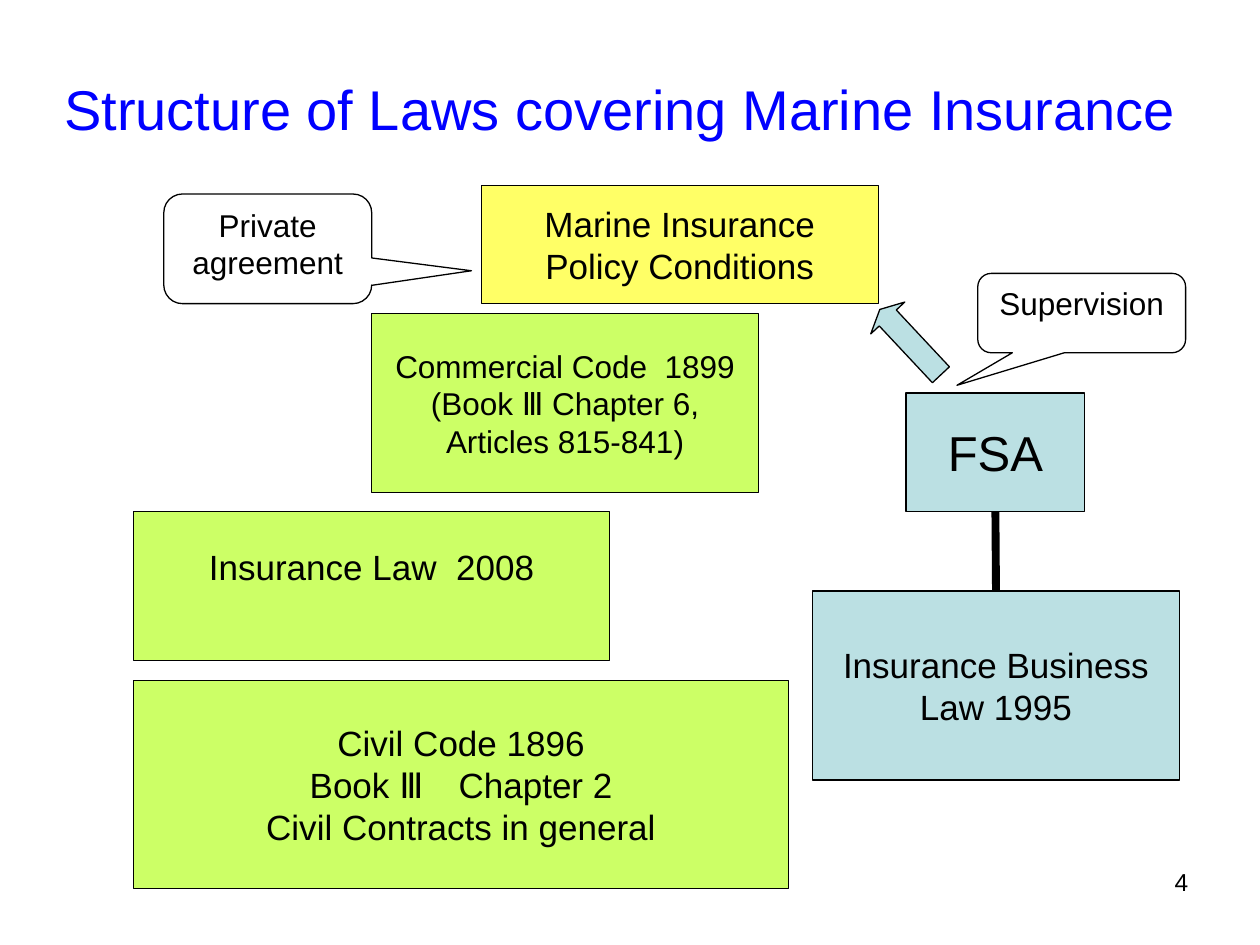
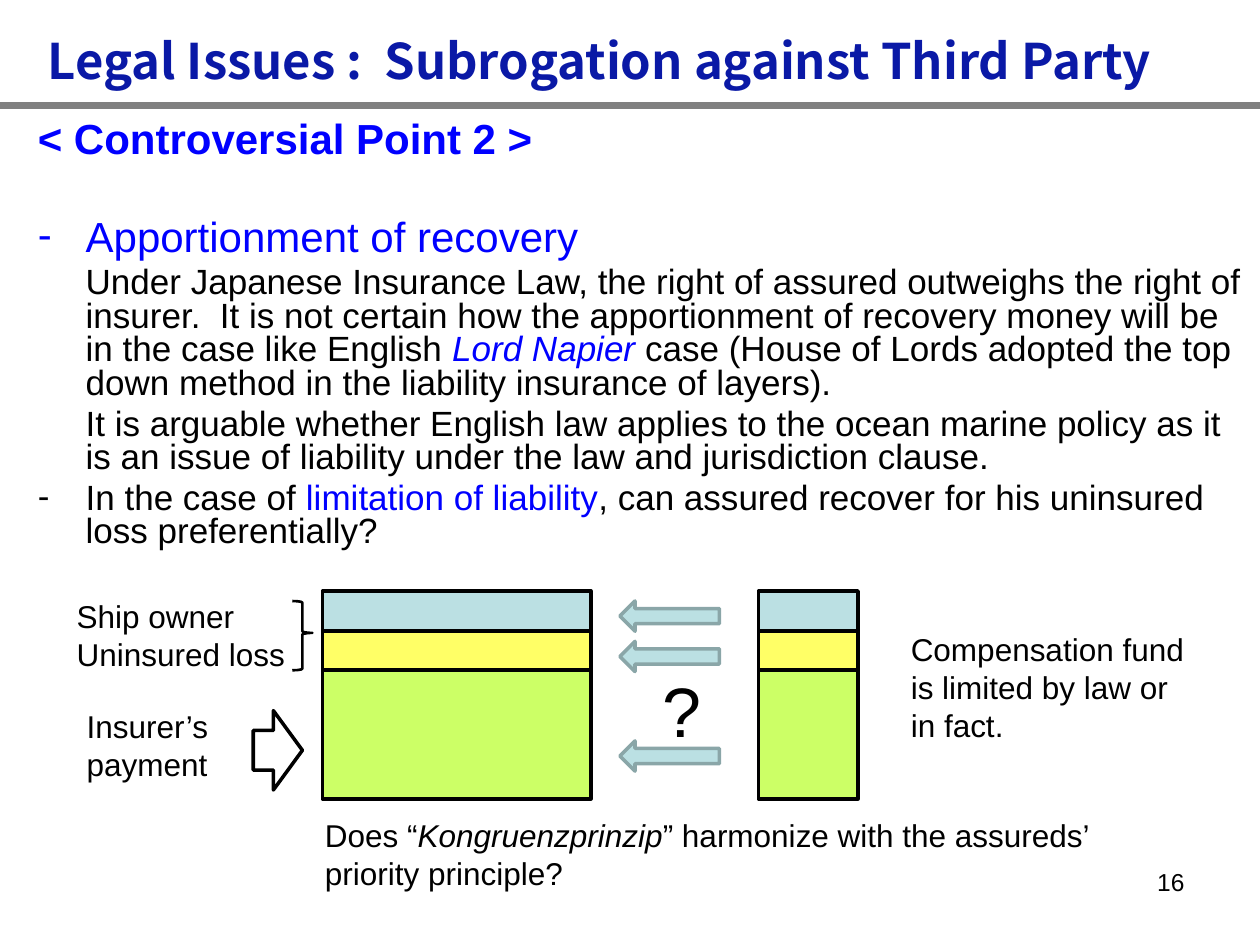
from lxml import etree
from pptx import Presentation, util as u
from pptx.dml.color import RGBColor
from pptx.enum import shapes, text
from pptx.oxml.ns import qn

PX = 9144
BLACK, BLUE, NAVY, GRAY = "000000", "0000FF", "0A19A6", "808080"
GREEN, YELLOW, AQUA, AQUA_EDGE = "CCFF66", "FFFF66", "BBE0E3", "8AA6A8"
LEFT, CENTER, RIGHT = text.PP_ALIGN.LEFT, text.PP_ALIGN.CENTER, text.PP_ALIGN.RIGHT
TOP, MIDDLE = text.MSO_ANCHOR.TOP, text.MSO_ANCHOR.MIDDLE
KIND = shapes.MSO_SHAPE
rgb = RGBColor.from_string


def write(sp, lines, size, color=BLACK, align=LEFT, anchor=TOP, wrap=True, font="Arial", bold=False):
    tf = sp.text_frame
    tf.word_wrap, tf.vertical_anchor = wrap, anchor
    tf.auto_size = text.MSO_AUTO_SIZE.NONE
    for i, line in enumerate(lines):
        p = tf.add_paragraph() if i else tf.paragraphs[0]
        p.alignment = align
        p.font.name, p.font.size, p.font.bold = font, u.Pt(size), bold
        p.font.color.rgb = rgb(color)
        for part in [(line,)] if isinstance(line, str) else line:
            r = p.add_run()
            r.text = part[0]
            if len(part) > 1:
                r.font.color.rgb, r.font.italic = rgb(part[1]), part[2]
    return tf


def draw(s, kind, box, fill=None, line=BLACK, width=0.75, adj=(), rotation=0):
    sp = s.shapes.add_shape(kind, *[v * PX for v in box])
    sp.shadow.inherit = False
    sp.rotation = rotation
    if fill:
        sp.fill.solid()
        sp.fill.fore_color.rgb = rgb(fill)
    else:
        sp.fill.background()
    sp.line.color.rgb, sp.line.width = rgb(line), u.Pt(width)
    for i, value in enumerate(adj):
        sp.adjustments[i] = value
    return sp


prs = Presentation()
prs.slide_width, prs.slide_height = 1000 * PX, 750 * PX
laws = prs.slides.add_slide(prs.slide_layouts[5])
issues = prs.slides.add_slide(prs.slide_layouts[1])

for s, title, box, size, color, font, bold, number, left in [
    (laws, "Structure of Laws covering Marine Insurance", (41, 52, 955, 67), 32, BLUE, "Arial", False, "4", 720),
    (issues, "Legal Issues :  Subrogation against Third Party", (28, 19, 937, 57), 28, NAVY,
     "Noto Sans CJK JP", True, "16", 717),
]:
    sp = s.shapes.title
    sp.left, sp.top, sp.width, sp.height = [v * PX for v in box]
    write(sp, [title], size, color, anchor=MIDDLE, font=font, bold=bold)
    sp = s.shapes.add_textbox(left * PX, 683 * PX, 233 * PX, 52 * PX)
    write(sp, [number], 14, align=RIGHT)

s = laws
boxes = {}
for name, box, fill, size, lines in [
    ("commercial", (295, 249, 307, 142), GREEN, 18,
     ["Commercial Code  1899", "(Book Ⅲ Chapter 6,", "Articles 815-841)"]),
    ("policy", (382, 147, 315, 94), YELLOW, 20, ["Marine Insurance", "Policy Conditions"]),
    ("insurance", (106, 406, 378, 118), GREEN, 20, ["Insurance Law  2008"]),
    ("civil", (106, 540, 520, 165), GREEN, 20,
     ["Civil Code 1896", "Book Ⅲ　Chapter 2", "Civil Contracts in general"]),
    ("fsa", (719, 312, 142, 94), AQUA, 28, ["FSA"]),
    ("business", (645, 469, 291, 150), AQUA, 20, ["Insurance Business", "Law 1995"]),
]:
    boxes[name] = draw(s, KIND.RECTANGLE, box, fill)
    write(boxes[name], lines, size, align=CENTER, anchor=MIDDLE, wrap=False)
boxes["insurance"].text_frame.margin_bottom = 36 * PX

for label, box, adj in [
    ("Private agreement", (130, 154, 165, 87), (0.98, 0.2, 0.17)),
    ("Supervision", (776, 217, 165, 63), (-0.6, 0.91, 0.17)),
]:
    sp = draw(s, KIND.ROUNDED_RECTANGULAR_CALLOUT, box, adj=adj)
    write(sp, [label], 18, align=CENTER)

draw(s, KIND.RIGHT_ARROW, (687, 253, 71, 37), AQUA, adj=(0.5, 0.25), rotation=226.9)
link = s.shapes.add_connector(shapes.MSO_CONNECTOR.STRAIGHT, 790 * PX, 406 * PX, 790 * PX, 469 * PX)
link.begin_connect(boxes["fsa"], 2)
link.end_connect(boxes["business"], 0)

s = issues
rule = s.shapes.add_connector(shapes.MSO_CONNECTOR.STRAIGHT, 0, 84 * PX, 1000 * PX, 84 * PX)
for line, color, width in [(link, BLACK, 4.5), (rule, GRAY, 4)]:
    line.line.color.rgb, line.line.width = rgb(color), u.Pt(width)
    etree.SubElement(line._element.spPr, qn("a:effectLst"))

body = s.placeholders[1]
body.left, body.top, body.width, body.height = [v * PX for v in (20, 92, 980, 583)]
tf = write(body, [
    "< Controversial Point 2 >",
    "Apportionment of recovery",
    [("Under Japanese Insurance Law, the right of assured outweighs the right of insurer.  It is not certain "
      "how the apportionment of recovery money will be in the case like English ",),
     ("Lord Napier ", BLUE, True),
     ("case (House of Lords adopted the top down method in the liability insurance of layers).",)],
    "It is arguable whether English law applies to the ocean marine policy as it is an issue of liability "
    "under the law and jurisdiction clause.",
    [("In the case of ",), ("limitation of liability", BLUE, False),
     (", can assured recover for his uninsured loss preferentially?",)],
], 20)
for p, before, margin, bullet in zip(tf.paragraphs, (5, 33, 4, 4, 4), (0, 38, 38, 38, 38), (0, 1, 0, 0, 1)):
    p.line_spacing, p.space_before = 0.8, u.Pt(before)
    pPr = p._p.get_or_add_pPr()
    pPr.set("marL", str(margin * PX))
    pPr.set("indent", str(-margin * PX if bullet else 0))
    mark = etree.Element(qn("a:buChar"), char="-") if bullet else etree.Element(qn("a:buNone"))
    pPr.find(qn("a:defRPr")).addprevious(mark)
for p in tf.paragraphs[:2]:
    p.font.size, p.font.color.rgb = u.Pt(24), rgb(BLUE)
tf.paragraphs[0].font.bold = True

for left, width in [(256, 213), (602, 79)]:
    top = 469
    for height, fill in [(32, AQUA), (31, YELLOW), (102, GREEN)]:
        draw(s, KIND.RECTANGLE, (left, top, width, height), fill, width=2)
        top += height
for top in (477, 509, 588):
    draw(s, KIND.RIGHT_ARROW, (492, top, 79, 24), AQUA, AQUA_EDGE, 2, rotation=180)
draw(s, KIND.RIGHT_BRACE, (232, 477, 16, 55), width=1.5, adj=(0.08, 0.46))
draw(s, KIND.RIGHT_ARROW, (201, 564, 39, 63), width=2, adj=(0.5, 0.59))

for box, lines, size, wrap in [
    ((59, 556, 117, 71), ["Insurer’s", "payment"], 18, False),
    ((51, 469, 187, 71), ["Ship owner", "Uninsured loss"], 18, False),
    ((516, 525, 47, 77), ["?"], 40, True),
    ((248, 643, 661, 71), [[("Does “",), ("Kongruenzprinzip", BLACK, True),
                            ("” harmonize with the assureds’ priority principle?",)]], 18, True),
    ((713, 495, 245, 101), ["Compensation fund is limited by law or in fact."], 18, True),
]:
    write(s.shapes.add_textbox(*[v * PX for v in box]), lines, size, wrap=wrap)

prs.save("out.pptx")
